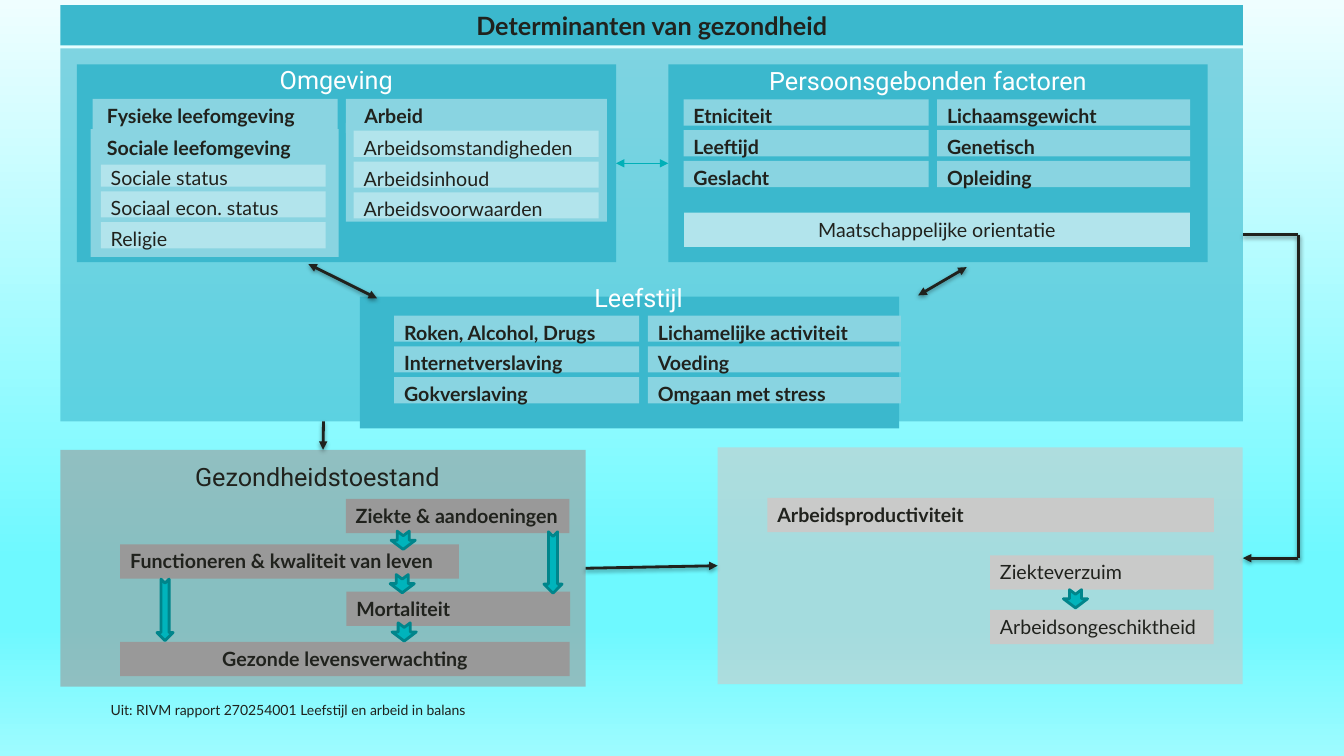
from lxml import etree
from pptx import Presentation
from pptx.dml.color import RGBColor
from pptx.enum.shapes import MSO_CONNECTOR, MSO_SHAPE
from pptx.enum.text import MSO_ANCHOR, PP_ALIGN
from pptx.oxml import parse_xml
from pptx.oxml.ns import nsdecls, qn
from pptx.util import Pt

TEAL, AQUA, PALE = "3BB8CD", "89D4E1", "B2E4EC"
GREY, SILVER, INK, WHITE = "999999", "C9CAC9", "20221D", "FFFFFF"
ARROW_FILL, ARROW_EDGE, LINK = "00B4BC", "00858B", "00B0B8"
ROW_HEIGHT, ROW_PITCH, BAR_HEIGHT = 18.7, 22, 24.5


def rgb(value):
    return RGBColor.from_string(value)


class Board:
    """Holds the slide and draws its elements; lengths are in points."""

    def __init__(self, slide):
        self.slide = slide

    def background(self, stops):
        fill = self.slide.background.fill
        fill.gradient()
        fill.gradient_angle = 270
        stop_list = self.slide.element.find(".//" + qn("a:gsLst"))
        for old in list(stop_list):
            stop_list.remove(old)
        for percent, color in stops:
            stop = etree.SubElement(stop_list, qn("a:gs"), pos=str(percent * 1000))
            etree.SubElement(stop, qn("a:srgbClr"), val=color)

    def add_text(self, shape, text, size=14, font="Lato", color=INK, bold=False,
                 center=False, indent=0):
        frame = shape.text_frame
        frame.word_wrap = True
        frame.vertical_anchor = MSO_ANCHOR.TOP
        frame.margin_left = Pt(7.2 + indent)
        paragraph = frame.paragraphs[0]
        paragraph.alignment = PP_ALIGN.CENTER if center else PP_ALIGN.LEFT
        run = paragraph.add_run()
        run.text = text
        run.font.size, run.font.name, run.font.bold = Pt(size), font, bold
        run.font.color.rgb = rgb(color)

    def box(self, left, top, width, height, fill, text=None, opacity=100, **style):
        shape = self.slide.shapes.add_shape(
            MSO_SHAPE.RECTANGLE, Pt(left), Pt(top), Pt(width), Pt(height))
        shape.shadow.inherit = False
        shape.fill.solid()
        shape.fill.fore_color.rgb = rgb(fill)
        shape.line.fill.background()
        if opacity < 100:
            color = shape.element.spPr.find(".//" + qn("a:srgbClr"))
            etree.SubElement(color, qn("a:alpha"), val=str(opacity * 1000))
        if text:
            self.add_text(shape, text, **style)
        return shape

    def rows(self, left, top, width, fill, labels, **style):
        for index, label in enumerate(labels):
            self.box(left, top + index * ROW_PITCH, width, ROW_HEIGHT, fill, label, **style)

    def label(self, left, top, width, height, text, **style):
        frame = self.slide.shapes.add_textbox(Pt(left), Pt(top), Pt(width), Pt(height))
        self.add_text(frame, text, **style)

    def heading(self, left, top, text, color=WHITE):
        self.label(left, top, 348, 28, text, size=18, font="Roboto", color=color, center=True)

    def line(self, start, end, color=INK, weight=2, heads="", shadow=True,
             begin=None, finish=None):
        link = self.slide.shapes.add_connector(
            MSO_CONNECTOR.STRAIGHT, *(Pt(value) for value in (*start, *end)))
        link.line.color.rgb = rgb(color)
        link.line.width = Pt(weight)
        outline = link.element.spPr.find(qn("a:ln"))
        for head in heads.split():
            etree.SubElement(outline, qn("a:" + head), type="triangle")
        effect = ('<a:outerShdw blurRad="39370" dist="20320" dir="5400000" rotWithShape="0">'
                  '<a:srgbClr val="000000"><a:alpha val="38000"/></a:srgbClr></a:outerShdw>'
                  if shadow else "")
        link.element.spPr.append(
            parse_xml(f'<a:effectLst {nsdecls("a")}>{effect}</a:effectLst>'))
        if begin:
            link.begin_connect(*begin)
        if finish:
            link.end_connect(*finish)

    def down_arrow(self, center_x, center_y, length=13, thickness=17.3):
        arrow = self.slide.shapes.add_shape(
            MSO_SHAPE.NOTCHED_RIGHT_ARROW, Pt(center_x - length / 2),
            Pt(center_y - thickness / 2), Pt(length), Pt(thickness))
        arrow.rotation = 90
        arrow.shadow.inherit = False
        arrow.fill.solid()
        arrow.fill.fore_color.rgb = rgb(ARROW_FILL)
        arrow.line.color.rgb = rgb(ARROW_EDGE)
        arrow.line.width = Pt(2)


def main():
    deck = Presentation()
    deck.slide_width, deck.slide_height = Pt(960), Pt(540)
    board = Board(deck.slides.add_slide(deck.slide_layouts[6]))
    board.background([(0, "EFFEFF"), (74, "6EF9FF"), (83, "6EF9FF"), (100, "9EFBFF")])

    # Title and panel of determinants
    board.box(43.2, 3.6, 844.6, 28.8, TEAL, "Determinanten van gezondheid",
              size=18, bold=True, center=True)
    determinants = board.box(43.2, 34.6, 844.6, 266.4, TEAL, opacity=60)

    # Environment
    environment = board.box(54.9, 46.1, 385.2, 141.1, TEAL)
    board.box(247, 87.8, 186.5, 70.6, AQUA)
    board.box(64.8, 92.2, 177.1, 91.4, AQUA)
    board.heading(66.2, 42.5, "Omgeving")
    board.box(66.2, 70.6, 175, BAR_HEIGHT, AQUA, "Fysieke leefomgeving", bold=True, indent=3)
    board.rows(72, 114.7, 160.6, PALE, ["Sociale status", "Sociaal econ. status", "Religie"])
    board.box(66.2, 93.2, 175, BAR_HEIGHT, AQUA, "Sociale leefomgeving", bold=True, indent=3)
    board.box(247, 70.6, 186.5, BAR_HEIGHT, AQUA, "Arbeid", bold=True, indent=6)
    board.rows(252.7, 93.4, 175, PALE,
               ["Arbeidsomstandigheden", "Arbeidsinhoud", "Arbeidsvoorwaarden"])

    # Personal factors
    personal = board.box(477.4, 46.1, 385.2, 141.1, TEAL)
    board.heading(488.9, 43.2, "Persoonsgebonden factoren")
    board.rows(488.3, 71, 175, AQUA, ["Etniciteit", "Leeftijd", "Geslacht"], bold=True)
    board.rows(669.4, 71, 180.7, AQUA, ["Lichaamsgewicht", "Genetisch", "Opleiding"], bold=True)
    board.box(488.6, 151.9, 361.4, BAR_HEIGHT, PALE, "Maatschappelijke orientatie", center=True)

    # Lifestyle
    board.box(257, 211.9, 385.2, 94.1, TEAL)
    board.heading(282.2, 198, "Leefstijl")
    board.rows(281.6, 225.4, 175, AQUA,
               ["Roken, Alcohol, Drugs", "Internetverslaving", "Gokverslaving"], bold=True)
    board.rows(462.8, 225.4, 180.7, AQUA,
               ["Lichamelijke activiteit", "Voeding", "Omgaan met stress"], bold=True)

    # State of health
    health = board.box(43.2, 321.3, 375.1, 169.2, GREY, opacity=60)
    board.heading(52.7, 326.2, "Gezondheidstoestand", INK)
    for left, top, width, text, center in [
        (247, 356.4, 159.8, "Ziekte & aandoeningen", False),
        (85.9, 388.8, 241.9, "Functioneren & kwaliteit van leven", False),
        (247.4, 422.6, 159.8, "Mortaliteit", False),
        (85.9, 458.6, 321.1, "Gezonde levensverwachting", True),
    ]:
        board.box(left, top, width, BAR_HEIGHT, GREY, text, bold=True, center=center)

    # Labour productivity
    productivity = board.box(512.6, 319.5, 375.1, 169.2, SILVER, opacity=60)
    board.box(548.2, 355.7, 319, BAR_HEIGHT, SILVER, "Arbeidsproductiviteit", bold=True)
    board.box(707.2, 396.7, 159.8, BAR_HEIGHT, SILVER, "Ziekteverzuim")
    board.box(707.2, 435.6, 159.8, BAR_HEIGHT, SILVER, "Arbeidsongeschiktheid")

    # Block arrows between the steps
    for center in [(288, 385.9), (287.3, 416.9), (288.7, 451.4), (768.2, 427.7)]:
        board.down_arrow(*center)
    board.down_arrow(395, 401.8, 43.9, 13)
    board.down_arrow(117.9, 435.6, 43.9, 11.5)

    # Links between the panels
    both = "headEnd tailEnd"
    board.line((440.1, 116.6), (477.4, 116.6), LINK, 0.75, both, shadow=False,
               begin=(environment, 3), finish=(personal, 1))
    board.line((220.3, 188.6), (269.3, 213.1), heads=both)
    board.line((655.9, 211), (690.5, 190.8), heads=both)
    board.line((418.3, 405.9), (512.6, 404.1), heads="tailEnd",
               begin=(health, 3), finish=(productivity, 1))
    board.line((231.1, 301), (231.1, 321.3), heads="tailEnd", finish=(health, 0))
    board.line((887.8, 167.8), (927.4, 167.8), begin=(determinants, 3))
    board.line((927.4, 167.8), (927.4, 398.7))
    board.line((927.4, 398.7), (887.8, 398.7), heads="tailEnd")

    # Source
    board.label(72, 497.5, 335.5, 19.4,
                "Uit: RIVM rapport 270254001 Leefstijl en arbeid in balans", size=10)
    deck.save("out.pptx")


if __name__ == "__main__":
    main()
